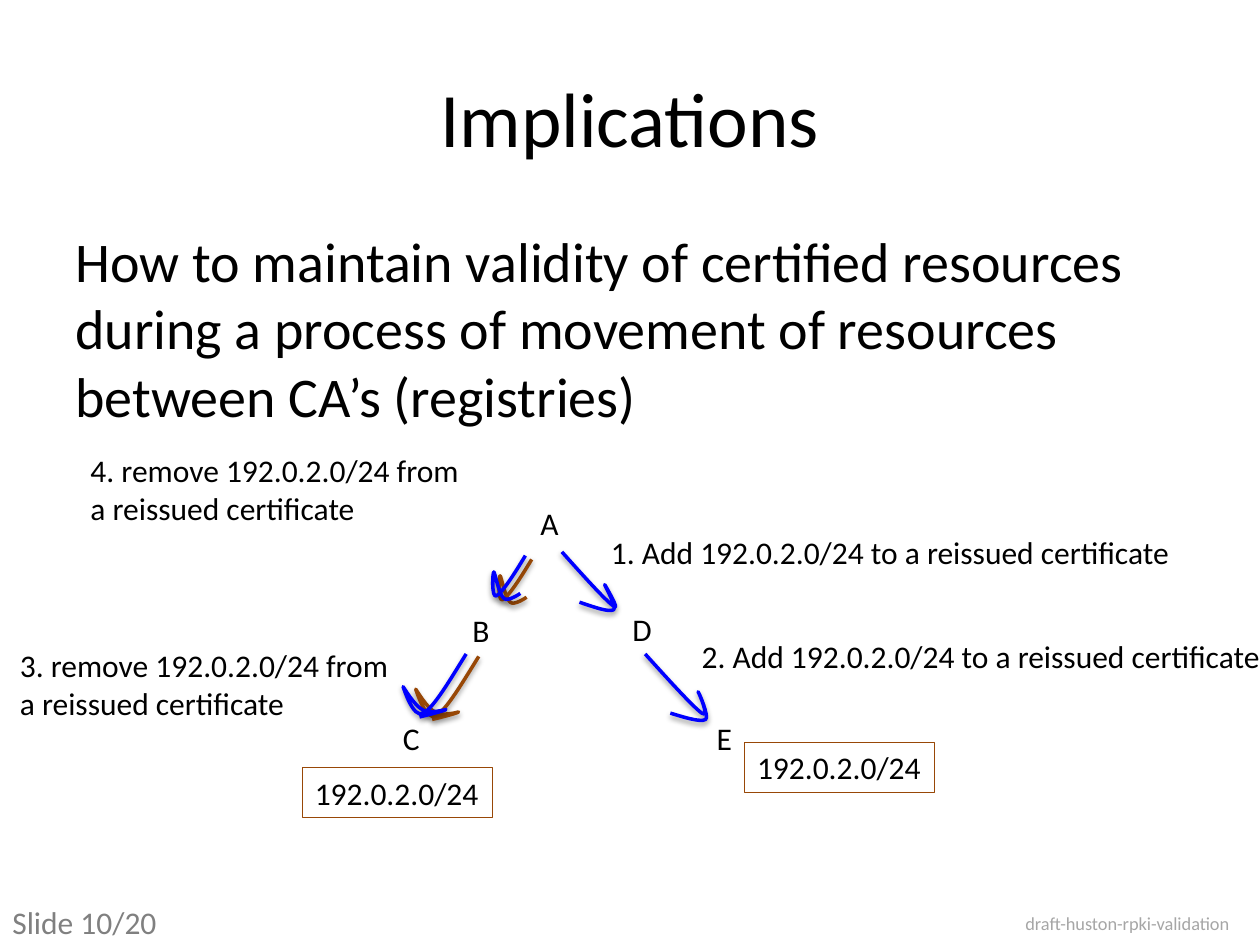
from lxml import etree
from pptx import Presentation
from pptx.dml.color import RGBColor
from pptx.enum import shapes, text
from pptx.util import Inches, Pt

BLACK, BROWN, BLUE = "000000", "984807", "0000FF"
NS = "http://schemas.openxmlformats.org/drawingml/2006/main"
SHADOW = (f'<a:effectLst xmlns:a="{NS}"><a:outerShdw blurRad="39370" dist="20320" '
          'dir="5400000" rotWithShape="0"><a:srgbClr val="000000">'
          '<a:alpha val="38000"/></a:srgbClr></a:outerShdw></a:effectLst>')

prs = Presentation()
prs.slide_width, prs.slide_height = Inches(10), Inches(7.5)
slide = prs.slides.add_slide(prs.slide_layouts[6])


def write(shape, words, size=18, color=BLACK, wrap=False):
    frame = shape.text_frame
    frame.word_wrap = wrap
    frame.vertical_anchor = text.MSO_ANCHOR.TOP
    para = frame.paragraphs[0]
    para.alignment = text.PP_ALIGN.LEFT
    run = para.add_run()
    run.text = words
    run.font.name, run.font.size = "Calibri", Pt(size)
    run.font.color.rgb = RGBColor.from_string(color)
    return frame


def draw(points, color, dx=0, dy=0):
    """Draw a stroke through chained cubic curves, shifted by dx, dy inches."""
    spots = [(Inches(x + dx), Inches(y + dy)) for x, y in points]
    pen = slide.shapes.build_freeform(*spots[0])
    pen.add_line_segments(spots[1:], close=False)
    stroke = pen.convert_to_shape()
    # Each three straight segments become one cubic curve
    lines = list(stroke._element.iter(f"{{{NS}}}lnTo"))
    for i in range(0, len(lines), 3):
        curve = etree.Element(f"{{{NS}}}cubicBezTo")
        lines[i].addprevious(curve)
        for line in lines[i:i + 3]:
            curve.append(line[0])
            line.getparent().remove(line)
    stroke.fill.background()
    stroke.line.color.rgb = RGBColor.from_string(color)
    stroke.line.width = Pt(2)
    stroke._element.spPr.append(etree.fromstring(SHADOW))


# Title and body
box = slide.shapes.add_textbox(Inches(0.5), Inches(0.3), Inches(9), Inches(1.25))
frame = write(box, "Implications", 44, wrap=True)
frame.vertical_anchor = text.MSO_ANCHOR.MIDDLE
frame.paragraphs[0].alignment = text.PP_ALIGN.CENTER
box = slide.shapes.add_textbox(Inches(0.5), Inches(1.75), Inches(9), Inches(1.85))
write(box, "How to maintain validity of certified resources during a process of "
      "movement of resources between CA’s (registries)", 32, wrap=True)

# Arrows between the registries
a_b = [(4.17, 4.41), (4.08, 4.56), (3.99, 4.7), (3.94, 4.73), (3.9, 4.75),
       (3.91, 4.54), (3.92, 4.54), (3.93, 4.55), (3.96, 4.72), (4, 4.75),
       (4.03, 4.78), (4.13, 4.71), (4.13, 4.71)]
b_c = [(3.7, 5.19), (3.57, 5.4), (3.44, 5.62), (3.36, 5.66), (3.28, 5.71),
       (3.2, 5.45), (3.2, 5.45), (3.2, 5.45), (3.29, 5.6), (3.35, 5.63),
       (3.4, 5.67), (3.55, 5.63), (3.54, 5.63), (3.54, 5.64), (3.33, 5.69),
       (3.33, 5.69)]
a_d = [(4.46, 4.38), (4.63, 4.57), (4.81, 4.77), (4.87, 4.81), (4.93, 4.86),
       (4.8, 4.64), (4.8, 4.64), (4.8, 4.65), (4.9, 4.82), (4.87, 4.84),
       (4.83, 4.86), (4.72, 4.82), (4.6, 4.78)]
d_e = [(5.12, 5.19), (5.31, 5.4), (5.5, 5.61), (5.57, 5.66), (5.64, 5.71),
       (5.54, 5.48), (5.54, 5.49), (5.55, 5.5), (5.63, 5.69), (5.6, 5.71),
       (5.56, 5.74), (5.36, 5.67), (5.32, 5.66)]
draw(a_b, BROWN, 0.05, 0.03)
draw(a_d, BLUE)
draw(d_e, BLUE)
draw(b_c, BROWN, 0.1, 0.02)
draw(b_c, BLUE)
draw(a_b, BLUE)

# Registry names, steps and footer
for x, y, w, h, words, size, color in [
    (4.19, 3.95, 0.35, 0.4, "A", 18, BLACK),
    (3.65, 4.8, 0.34, 0.4, "B", 18, BLACK),
    (3.1, 5.66, 0.34, 0.4, "C", 18, BLACK),
    (4.92, 4.79, 0.36, 0.4, "D", 18, BLACK),
    (5.59, 5.66, 0.33, 0.4, "E", 18, BLACK),
    (4.75, 4.18, 4.69, 0.4, "1. Add 192.0.2.0/24 to a reissued certificate", 18, BLACK),
    (5.47, 5.01, 4.69, 0.4, "2. Add 192.0.2.0/24 to a reissued certificate", 18, BLACK),
    (0.06, 5.08, 3.23, 0.71, "3. remove 192.0.2.0/24 from a reissued certificate", 18, BLACK),
    (0.62, 3.53, 3.23, 0.71, "4. remove 192.0.2.0/24 from a reissued certificate", 18, BLACK),
    (8.04, 7.19, 1.86, 0.28, "draft-huston-rpki-validation", 10.5, "A6A6A6"),
    (0, 7.12, 1.36, 0.4, "Slide 10/20", 18, "808080"),
]:
    box = slide.shapes.add_textbox(Inches(x), Inches(y), Inches(w), Inches(h))
    write(box, words, size, color, wrap=h > 0.5)

# Address held by C and by E
for x, y in [(2.4, 6.09), (5.91, 5.89)]:
    box = slide.shapes.add_shape(shapes.MSO_SHAPE.RECTANGLE, Inches(x), Inches(y),
                                 Inches(1.51), Inches(0.4))
    box.shadow.inherit = False
    box.fill.background()
    box.line.color.rgb = RGBColor.from_string(BROWN)
    box.line.width = Pt(0.5)
    write(box, "192.0.2.0/24")

prs.save("out.pptx")
